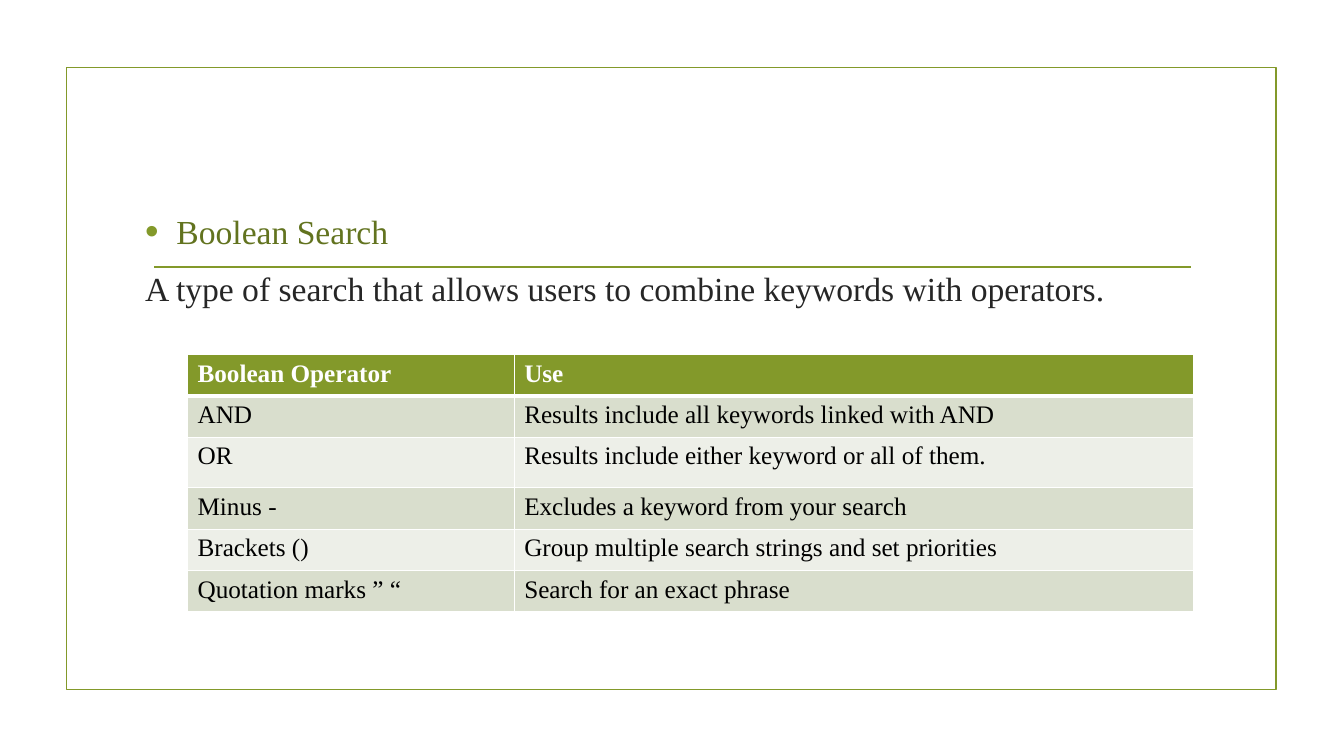
from typing import NamedTuple

from lxml.etree import SubElement
from pptx import Presentation
from pptx.dml.color import RGBColor
from pptx.enum.shapes import MSO_CONNECTOR, MSO_SHAPE
from pptx.enum.text import MSO_ANCHOR, MSO_AUTO_SIZE
from pptx.oxml.ns import qn
from pptx.util import Inches, Pt

FONT = "Times New Roman"
COLORS = {
    "green": "83992A",
    "heading": "62731F",
    "body": "262626",
    "white": "FFFFFF",
    "black": "000000",
    "band_dark": "D9DECD",
    "band_light": "EDEFE8",
}


class Operator(NamedTuple):
    name: str
    use: str
    height: float = 0.41


OPERATORS = [
    Operator("Boolean Operator", "Use"),
    Operator("AND", "Results include all keywords linked with AND"),
    Operator("OR", "Results include either keyword or all of them.", 0.5),
    Operator("Minus -", "Excludes a keyword from your search"),
    Operator("Brackets ()", "Group multiple search strings and set priorities"),
    Operator("Quotation marks ” “", "Search for an exact phrase"),
]
COLUMN_WIDTHS = [3.24, 6.74]


def rgb(name: str) -> RGBColor:
    return RGBColor.from_string(COLORS[name])


def add_run(p, text: str, size: float, color: str, bold: bool = False) -> None:
    r = p.add_run()
    r.text = text
    r.font.name = FONT
    r.font.size = Pt(size)
    r.font.bold = bold
    r.font.color.rgb = rgb(color)


def set_bullet(p, shown: bool) -> None:
    pPr = p._p.get_or_add_pPr()
    indent = Inches(0.31) if shown else 0
    pPr.set("marL", str(indent))
    pPr.set("indent", str(-indent))
    if shown:
        color = SubElement(pPr, qn("a:buClr"))
        SubElement(color, qn("a:srgbClr"), val=COLORS["green"])
        SubElement(pPr, qn("a:buSzPct"), val="115000")
        SubElement(pPr, qn("a:buFont"), typeface="Arial")
        SubElement(pPr, qn("a:buChar"), char="•")
    else:
        SubElement(pPr, qn("a:buNone"))


def add_frame(s) -> None:
    sp = s.shapes.add_shape(
        MSO_SHAPE.RECTANGLE, Inches(0.66), Inches(0.67), Inches(12), Inches(6.17)
    )
    sp.shadow.inherit = False
    sp.fill.background()
    sp.line.color.rgb = rgb("green")
    sp.line.width = Pt(1.25)


def add_rule(s) -> None:
    cx = s.shapes.add_connector(
        MSO_CONNECTOR.STRAIGHT, Inches(1.53), Inches(2.65), Inches(11.81), Inches(2.65)
    )
    cx.line.color.rgb = rgb("green")
    cx.line.width = Pt(1.25)
    SubElement(cx._element.spPr, qn("a:effectLst"))


def fill_body(sp) -> None:
    sp.left, sp.top = Inches(1.34), Inches(2.04)
    sp.width, sp.height = Inches(10.5), Inches(3.63)
    tf = sp.text_frame
    tf.word_wrap = True
    tf.auto_size = MSO_AUTO_SIZE.NONE
    tf.vertical_anchor = MSO_ANCHOR.TOP

    p = tf.paragraphs[0]
    set_bullet(p, True)
    p.space_before = Pt(0)
    p.space_after = Pt(6)
    add_run(p, "Boolean Search", 24, "heading")

    p = tf.add_paragraph()
    set_bullet(p, False)
    p.space_before = Pt(6)
    p.space_after = Pt(6)
    text = "A type of search that allows users to combine keywords with operators."
    add_run(p, text, 24, "body")


def set_borders(cell, row: int) -> None:
    widths = {"L": 1, "R": 1, "T": 3 if row == 1 else 1, "B": 3 if row == 0 else 1}
    tcPr = cell._tc.get_or_add_tcPr()
    for side, width in widths.items():
        ln = SubElement(tcPr, qn(f"a:ln{side}"), w=str(Pt(width)))
        fill = SubElement(ln, qn("a:solidFill"))
        SubElement(fill, qn("a:srgbClr"), val=COLORS["white"])


def add_operator_table(s) -> None:
    table = s.shapes.add_table(
        len(OPERATORS), len(COLUMN_WIDTHS), Inches(1.86), Inches(3.52),
        Inches(sum(COLUMN_WIDTHS)), Inches(sum(o.height for o in OPERATORS)),
    ).table
    for column, width in zip(table.columns, COLUMN_WIDTHS):
        column.width = Inches(width)
    for i, operator in enumerate(OPERATORS):
        table.rows[i].height = Inches(operator.height)
        header = i == 0
        band = "green" if header else "band_dark" if i % 2 else "band_light"
        for j, text in enumerate((operator.name, operator.use)):
            cell = table.cell(i, j)
            set_borders(cell, i)
            cell.fill.solid()
            cell.fill.fore_color.rgb = rgb(band)
            p = cell.text_frame.paragraphs[0]
            add_run(p, text, 18, "white" if header else "black", header)


def main() -> None:
    prs = Presentation()
    prs.slide_width, prs.slide_height = Inches(13.33), Inches(7.5)
    s = prs.slides.add_slide(prs.slide_layouts[1])
    title = s.shapes.title._element
    title.getparent().remove(title)
    add_frame(s)
    add_rule(s)
    fill_body(s.placeholders[1])
    add_operator_table(s)
    prs.save("out.pptx")


if __name__ == "__main__":
    main()
